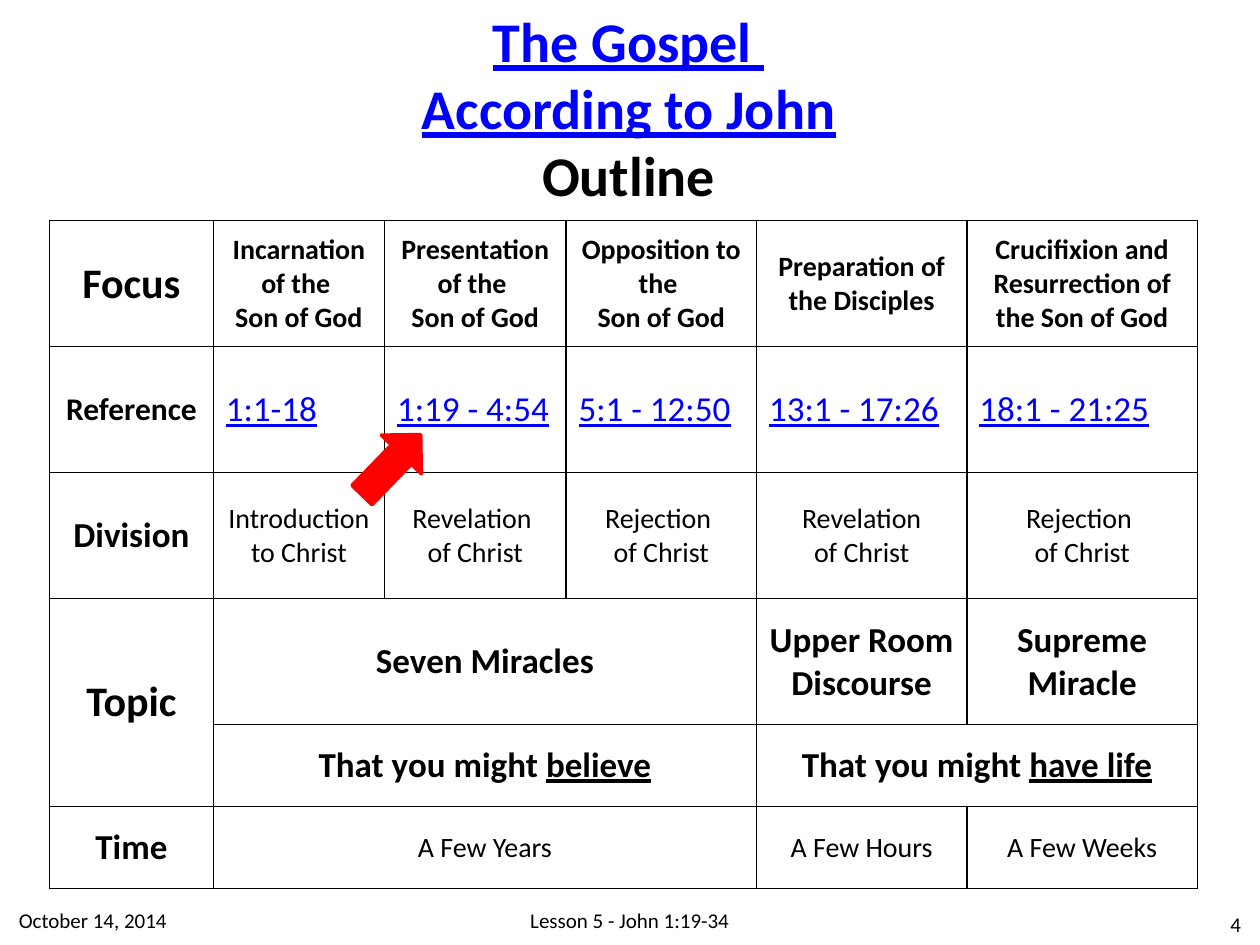
from lxml.etree import SubElement
from pptx import Presentation
from pptx.dml.color import RGBColor
from pptx.enum.shapes import MSO_SHAPE as Shape
from pptx.enum.text import MSO_ANCHOR as Anchor, MSO_AUTO_SIZE as AutoSize, PP_ALIGN as Align
from pptx.oxml.ns import qn
from pptx.util import Cm, Pt

BLACK, BLUE, RED, WHITE = "000000", "0000FF", "FF0000", "FFFFFF"
COLS = [3.3, 3.45, 3.66, 3.84, 4.24, 4.65]
ROWS = [2.54] * 4 + [1.65] * 2
HEAD = dict(size=16, bold=True)
LABEL = dict(size=20, bold=True)
BIG = dict(size=24, bold=True)
PLAIN = dict(size=16)
LINK = dict(size=20, color=BLUE, underline=True, align=Align.LEFT)

GRID = [
    [("Focus", BIG), ("Incarnation of the \nSon of God", HEAD),
     ("Presentation of the \nSon of God", HEAD), ("Opposition to the \nSon of God", HEAD),
     ("Preparation of the Disciples", HEAD),
     ("Crucifixion and Resurrection of the Son of God", HEAD)],
    [("Reference", dict(size=18, bold=True)), ("1:1-18", LINK), ("1:19 - 4:54", LINK),
     ("5:1 - 12:50", LINK), ("13:1 - 17:26", LINK), ("18:1 - 21:25", LINK)],
    [("Division", LABEL), ("Introduction to Christ", PLAIN), ("Revelation \nof Christ", PLAIN),
     ("Rejection \nof Christ", PLAIN), ("Revelation\nof Christ", PLAIN),
     ("Rejection \nof Christ", PLAIN)],
    [("Topic", BIG), ("Seven Miracles", LABEL), None, None,
     ("Upper Room Discourse", LABEL), ("Supreme Miracle", LABEL)],
    [None, ("That you might ", LABEL), None, None, ("That you might ", LABEL), None],
    [("Time", LABEL), ("A Few Years", PLAIN), None, None,
     ("A Few Hours", PLAIN), ("A Few Weeks", PLAIN)],
]
MERGES = [((3, 0), (4, 0)), ((3, 1), (3, 3)), ((4, 1), (4, 3)), ((4, 4), (4, 5)), ((5, 1), (5, 3))]
ENDINGS = {(4, 1): "believe", (4, 4): "have life"}


def rgb(value):
    """Turn a hex string into a colour."""
    return RGBColor.from_string(value)


def style_run(r, size, color=BLACK, bold=False, underline=False):
    """Format one run."""
    f = r.font
    f.name, f.size, f.bold, f.underline = "Calibri", Pt(size), bold, underline
    f.color.rgb = rgb(color)


def write(tf, text, align=Align.CENTER, **style):
    """Fill a text frame with uniformly formatted paragraphs."""
    tf.text = text
    for p in tf.paragraphs:
        p.alignment = align
        for r in p.runs:
            style_run(r, **style)


def add_title(slide, left, top, width, height):
    """Place the three-line title."""
    sp = slide.shapes.title
    sp.left, sp.top, sp.width, sp.height = Cm(left), Cm(top), Cm(width), Cm(height)
    tf = sp.text_frame
    tf.auto_size, tf.word_wrap, tf.vertical_anchor = AutoSize.NONE, False, Anchor.TOP
    write(tf, "The Gospel \nAccording to John\nOutline",
          size=32, color=BLUE, bold=True, underline=True)
    style_run(tf.paragraphs[-1].runs[0], size=32, bold=True)


def frame_cell(cell):
    """Give a cell a white fill and thin black borders."""
    cell.fill.solid()
    cell.fill.fore_color.rgb = rgb(WHITE)
    tcPr = cell._tc.get_or_add_tcPr()
    for i, side in enumerate(("a:lnL", "a:lnR", "a:lnT", "a:lnB")):
        ln = SubElement(tcPr, qn(side), w=str(Pt(1)))
        SubElement(SubElement(ln, qn("a:solidFill")), qn("a:srgbClr"), val=BLACK)
        tcPr.insert(i, ln)


def add_outline(slide, left, top):
    """Place the outline table."""
    table = slide.shapes.add_table(len(ROWS), len(COLS), Cm(left), Cm(top),
                                   Cm(sum(COLS)), Cm(sum(ROWS))).table
    table.first_row = table.horz_banding = False
    for col, width in zip(table.columns, COLS):
        col.width = Cm(width)
    for row, height in zip(table.rows, ROWS):
        row.height = Cm(height)
    for first, last in MERGES:
        table.cell(*first).merge(table.cell(*last))
    for i, row in enumerate(GRID):
        for j, entry in enumerate(row):
            cell = table.cell(i, j)
            frame_cell(cell)
            if entry:
                text, style = entry
                cell.vertical_anchor = Anchor.MIDDLE
                write(cell.text_frame, text, **style)
    for (i, j), text in ENDINGS.items():
        r = table.cell(i, j).text_frame.paragraphs[0].add_run()
        r.text = text
        style_run(r, underline=True, **LABEL)


def add_arrow(slide, left, top, width, height):
    """Place the red arrow that marks the current passage."""
    sp = slide.shapes.add_shape(Shape.RIGHT_ARROW, Cm(left), Cm(top), Cm(width), Cm(height))
    sp.rotation = 314.1
    sp.shadow.inherit = False
    sp.fill.solid()
    sp.fill.fore_color.rgb = sp.line.color.rgb = rgb(RED)
    sp.line.width = Pt(2)


def add_note(slide, text, align, left, top, width, height=1.02):
    """Place one footer text."""
    tf = slide.shapes.add_textbox(Cm(left), Cm(top), Cm(width), Cm(height)).text_frame
    tf.word_wrap, tf.vertical_anchor = True, Anchor.MIDDLE
    write(tf, text, align, size=12)


def main():
    """Build and save the slide."""
    prs = Presentation()
    prs.slide_width, prs.slide_height = Cm(25.4), Cm(19.05)
    slide = prs.slides.add_slide(prs.slide_layouts[5])
    add_title(slide, 8.08, 0, 9.19, 4.37)
    add_outline(slide, 1, 4.45)
    add_note(slide, "Lesson 5 - John 1:19-34", Align.CENTER, 4.34, 18.03, 16.71)
    add_note(slide, "October 14, 2014", Align.LEFT, 0.13, 18.03, 5.16)
    add_arrow(slide, 7.04, 8.81, 1.7, 1.12)
    add_note(slide, "4", Align.RIGHT, 23.37, 18.11, 1.9)
    prs.save("out.pptx")


if __name__ == "__main__":
    main()
